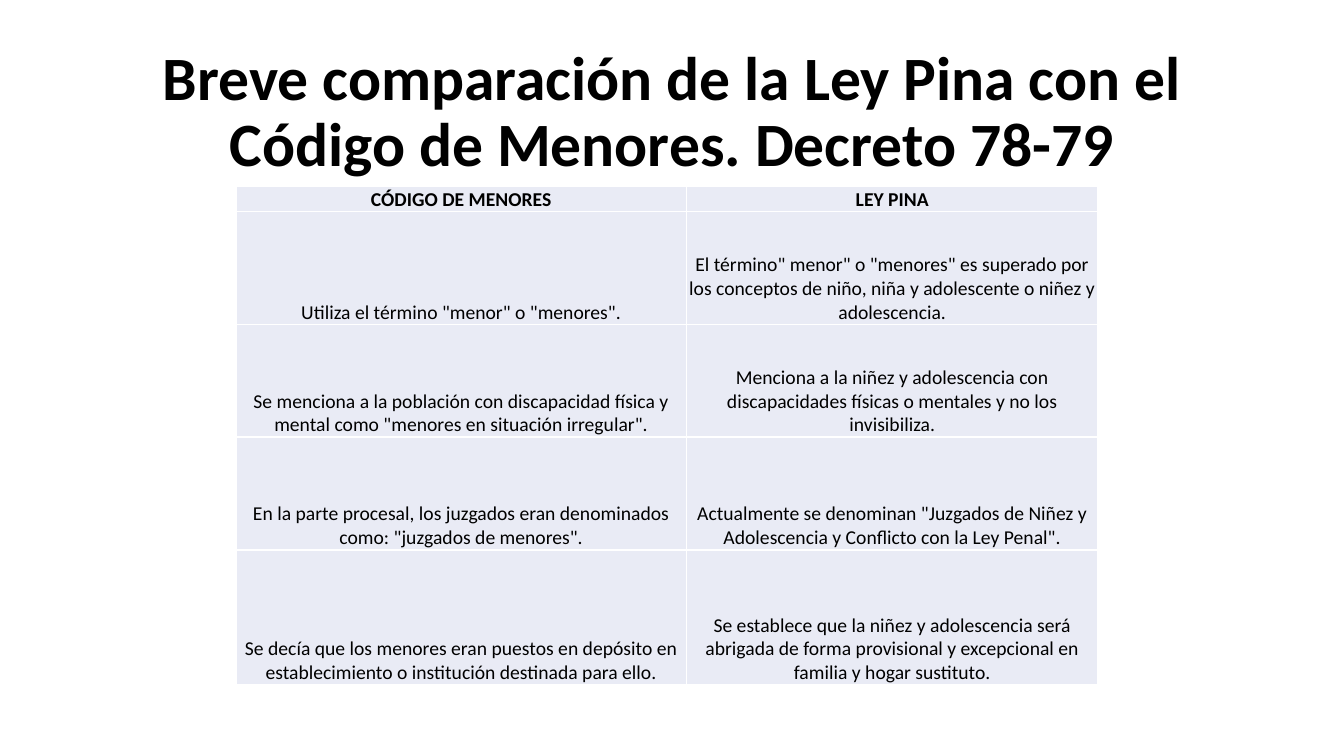
from lxml.etree import SubElement
from pptx import Presentation
from pptx.dml.color import RGBColor
from pptx.enum.text import MSO_ANCHOR as Anchor, MSO_AUTO_SIZE as AutoSize, PP_ALIGN as Align
from pptx.oxml.ns import qn
from pptx.util import Inches, Pt

COLORS = {"text": "000000", "cell": "E9EBF5", "border": "FFFFFF"}
FONT = "Calibri"

COLUMN_WIDTHS = [4.47, 4.08]
ROW_HEIGHTS = [0.22, 1.12, 1.12, 1.12, 1.34]
COMPARISON = [
    ("CÓDIGO DE MENORES", "LEY PINA"),
    ('Utiliza el término "menor" o "menores".',
     'El término" menor" o "menores" es superado por los conceptos de niño, '
     'niña y adolescente o niñez y adolescencia.'),
    ('Se menciona a la población con discapacidad física y mental como '
     '"menores en situación irregular".',
     'Menciona a la niñez y adolescencia con discapacidades físicas o '
     'mentales y no los invisibiliza.'),
    ('En la parte procesal, los juzgados eran denominados como: '
     '"juzgados de menores".',
     'Actualmente se denominan "Juzgados de Niñez y Adolescencia y '
     'Conflicto con la Ley Penal".'),
    ('Se decía que los menores eran puestos en depósito en establecimiento '
     'o institución destinada para ello.',
     'Se establece que la niñez y adolescencia será abrigada de forma '
     'provisional y excepcional en familia y hogar sustituto.'),
]


class SlideBuilder:
    def __init__(self, slide, font, colors):
        self.slide = slide
        self.font = font
        self.colors = colors

    def centered_text(self, frame, text, size, bold):
        paragraph = frame.paragraphs[0]
        paragraph.alignment = Align.CENTER
        run = paragraph.add_run()
        run.text = text
        run.font.name = self.font
        run.font.size = Pt(size)
        run.font.bold = bold
        run.font.color.rgb = RGBColor.from_string(self.colors["text"])
        return paragraph

    def title(self, text, left, top, width, height):
        title = self.slide.shapes.title
        title.left, title.top = Inches(left), Inches(top)
        title.width, title.height = Inches(width), Inches(height)
        frame = title.text_frame
        frame.word_wrap = True
        frame.auto_size = AutoSize.NONE
        frame.vertical_anchor = Anchor.MIDDLE
        self.centered_text(frame, text, 44, True).line_spacing = 0.9

    def border(self, cell):
        properties = cell._tc.get_or_add_tcPr()
        for side in ("a:lnL", "a:lnR", "a:lnT", "a:lnB"):
            line = SubElement(properties, qn(side), w=str(Pt(1)))
            fill = SubElement(line, qn("a:solidFill"))
            SubElement(fill, qn("a:srgbClr"), val=self.colors["border"])

    def cell(self, cell, text, bold):
        self.border(cell)
        cell.fill.solid()
        cell.fill.fore_color.rgb = RGBColor.from_string(self.colors["cell"])
        cell.vertical_anchor = Anchor.BOTTOM
        cell.margin_left = cell.margin_right = cell.margin_top = Inches(0.01)
        cell.margin_bottom = 0
        self.centered_text(cell.text_frame, text, 14, bold)

    def table(self, rows, left, top, widths, heights):
        table = self.slide.shapes.add_table(
            len(rows), len(widths), Inches(left), Inches(top),
            Inches(sum(widths)), Inches(sum(heights))).table
        for column, width in zip(table.columns, widths):
            column.width = Inches(width)
        for index, (row, height, texts) in enumerate(zip(table.rows, heights, rows)):
            row.height = Inches(height)
            for cell, text in zip(row.cells, texts):
                self.cell(cell, text, bold=index == 0)


def main():
    deck = Presentation()
    deck.slide_width, deck.slide_height = Inches(13.33), Inches(7.5)
    title_only = deck.slide_layouts[5]
    builder = SlideBuilder(deck.slides.add_slide(title_only), FONT, COLORS)
    builder.title("Breve comparación de la Ley Pina con el Código de Menores. "
                  "Decreto 78-79", 0.92, 0.4, 11.5, 1.45)
    builder.table(COMPARISON, 2.34, 1.85, COLUMN_WIDTHS, ROW_HEIGHTS)
    deck.save("out.pptx")


if __name__ == "__main__":
    main()
